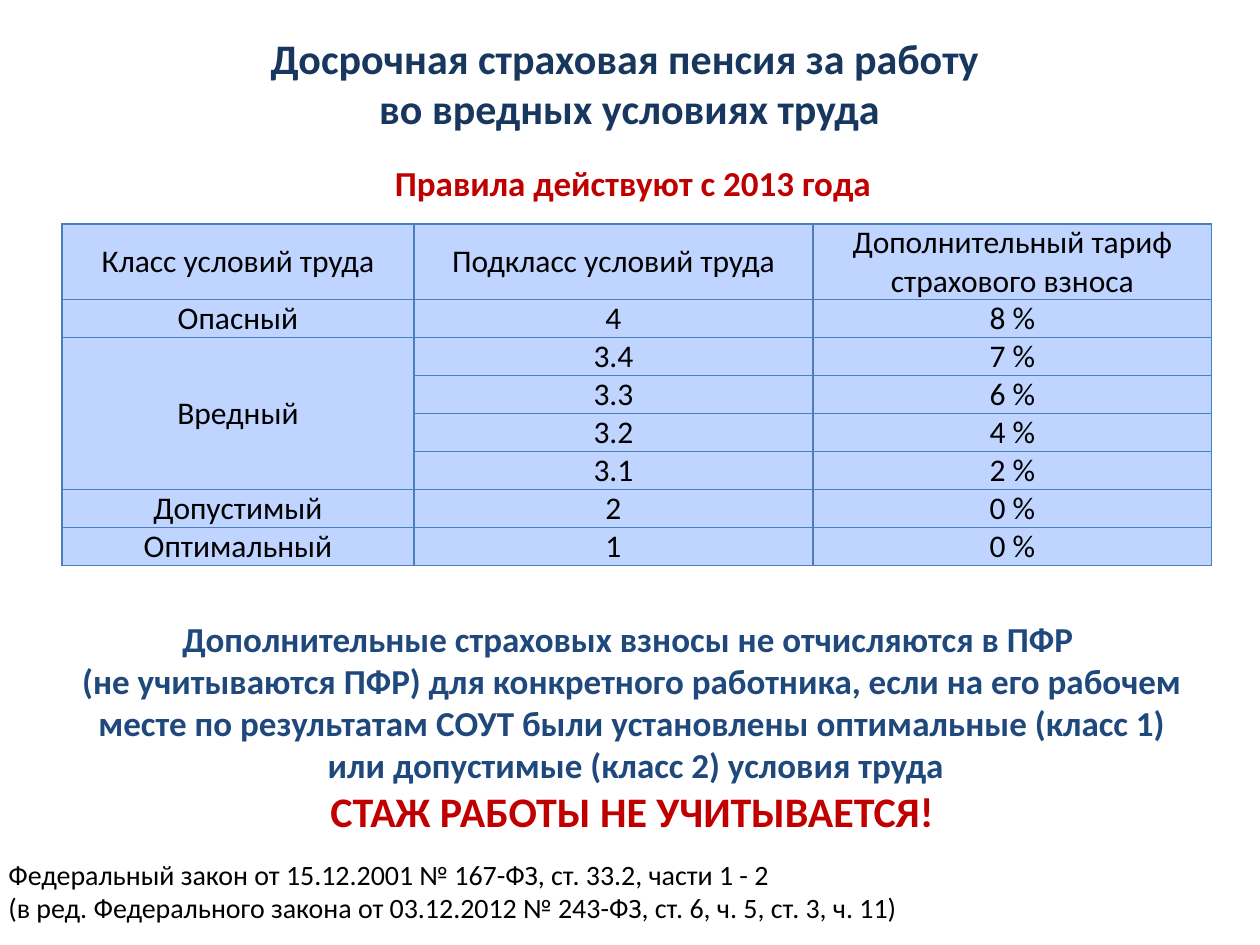
from dataclasses import dataclass

from lxml import etree
from pptx import Presentation
from pptx.dml.color import RGBColor
from pptx.enum import text
from pptx.oxml import ns
from pptx.util import Emu, Pt

PX = 914400 // 126  # EMU in one px


@dataclass(frozen=True)
class Theme:
    font: str = "Calibri"
    navy: str = "17375E"
    blue: str = "1F497D"
    red: str = "C00000"
    black: str = "000000"
    cell: str = "BFD4FF"
    border: str = "4B7EBC"
    heading: int = 24
    body: int = 20
    table: int = 18
    source: int = 16


THEME = Theme()
CENTER = text.PP_ALIGN.CENTER
LEFT = text.PP_ALIGN.LEFT

# Table content: an empty class continues the one above
COLUMNS = (352, 399, 399)
HEADER_HEIGHT, ROW_HEIGHT = 75, 38
ROWS = (
    ("Класс условий труда", "Подкласс условий труда",
     "Дополнительный тариф страхового взноса"),
    ("Опасный", "4", "8 %"),
    ("Вредный", "3.4", "7 %"),
    ("", "3.3", "6 %"),
    ("", "3.2", "4 %"),
    ("", "3.1", "2 %"),
    ("Допустимый", "2", "0 %"),
    ("Оптимальный", "1", "0 %"),
)
HARMFUL_FIRST, HARMFUL_LAST = 2, 5


def px(*lengths):
    return [Emu(length * PX) for length in lengths]


def write(para, words, size, color, bold=False, align=CENTER):
    para.text = words
    para.alignment = align
    for span in para.runs:
        span.font.name = THEME.font
        span.font.size = Pt(size)
        span.font.bold = bold
        span.font.color.rgb = RGBColor.from_string(color)


def set_title(page, bounds, words):
    title = page.shapes.title
    title.left, title.top, title.width, title.height = px(*bounds)
    frame = title.text_frame
    frame.auto_size = text.MSO_AUTO_SIZE.NONE
    frame.vertical_anchor = text.MSO_ANCHOR.TOP
    write(frame.paragraphs[0], words, THEME.heading, THEME.navy, bold=True)


def add_text(page, bounds, *paragraphs, bold=True, align=CENTER):
    """Each paragraph is (words, size, color)."""
    frame = page.shapes.add_textbox(*px(*bounds)).text_frame
    frame.word_wrap = True
    for index, (words, size, color) in enumerate(paragraphs):
        para = frame.add_paragraph() if index else frame.paragraphs[0]
        write(para, words, size, color, bold, align)


def add_borders(cell):
    properties = cell._tc.get_or_add_tcPr()
    for side in ("a:lnL", "a:lnR", "a:lnT", "a:lnB"):
        line = etree.SubElement(properties, ns.qn(side), w=str(Pt(0.75)))
        fill = etree.SubElement(line, ns.qn("a:solidFill"))
        etree.SubElement(fill, ns.qn("a:srgbClr"), val=THEME.border)


def format_cell(cell, words):
    cell.margin_left, cell.margin_right = px(6, 6)
    cell.margin_top = cell.margin_bottom = 0
    cell.vertical_anchor = text.MSO_ANCHOR.MIDDLE
    add_borders(cell)
    cell.fill.solid()
    cell.fill.fore_color.rgb = RGBColor.from_string(THEME.cell)
    write(cell.text_frame.paragraphs[0], words, THEME.table, THEME.black)


def add_rates_table(page, left, top):
    heights = [HEADER_HEIGHT] + [ROW_HEIGHT] * (len(ROWS) - 1)
    table = page.shapes.add_table(
        len(ROWS), len(COLUMNS), *px(left, top, sum(COLUMNS), sum(heights))).table
    table.first_row = table.horz_banding = False
    for column, width in zip(table.columns, px(*COLUMNS)):
        column.width = width
    for row, height, values in zip(table.rows, px(*heights), ROWS):
        row.height = height
        for cell, words in zip(row.cells, values):
            format_cell(cell, words)
    table.cell(HARMFUL_FIRST, 0).merge(table.cell(HARMFUL_LAST, 0))


def main():
    deck = Presentation()
    deck.slide_width, deck.slide_height = px(1260, 945)
    page = deck.slides.add_slide(deck.slide_layouts[5])

    # Heading and subheading
    set_title(page, (64, 26, 1131, 115),
              "Досрочная страховая пенсия за работу \vво вредных условиях труда")
    add_text(page, (25, 155, 1216, 55),
             ("Правила действуют с 2013 года", THEME.body, THEME.red))

    # Contribution rates
    add_rates_table(page, 62, 224)

    # Conclusion
    add_text(page, (52, 611, 1160, 233),
             ("Дополнительные страховых взносы не отчисляются в ПФР \v"
              "(не учитываются ПФР) для конкретного работника, если на его "
              "рабочем месте по результатам СОУТ были установлены оптимальные "
              "(класс 1)\v или допустимые (класс 2) условия труда",
              THEME.body, THEME.blue),
             ("СТАЖ РАБОТЫ НЕ УЧИТЫВАЕТСЯ!", THEME.heading, THEME.red))

    # Legal source
    add_text(page, (-4, 851, 1106, 81),
             ("Федеральный закон от 15.12.2001 № 167-ФЗ, ст. 33.2, части 1 - 2 \v"
              "(в ред. Федерального закона от 03.12.2012 № 243-ФЗ, ст. 6, ч. 5, "
              "ст. 3, ч. 11)", THEME.source, THEME.black),
             bold=False, align=LEFT)

    deck.save("out.pptx")


if __name__ == "__main__":
    main()
